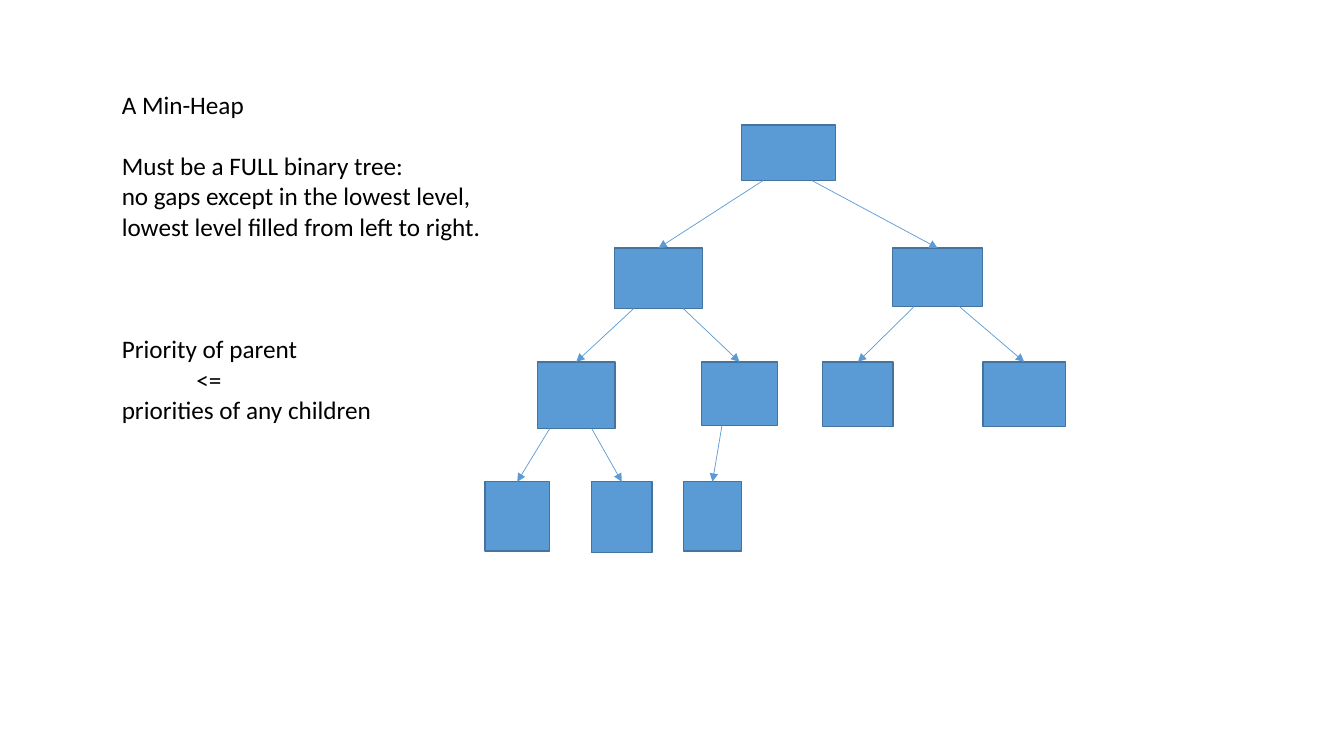
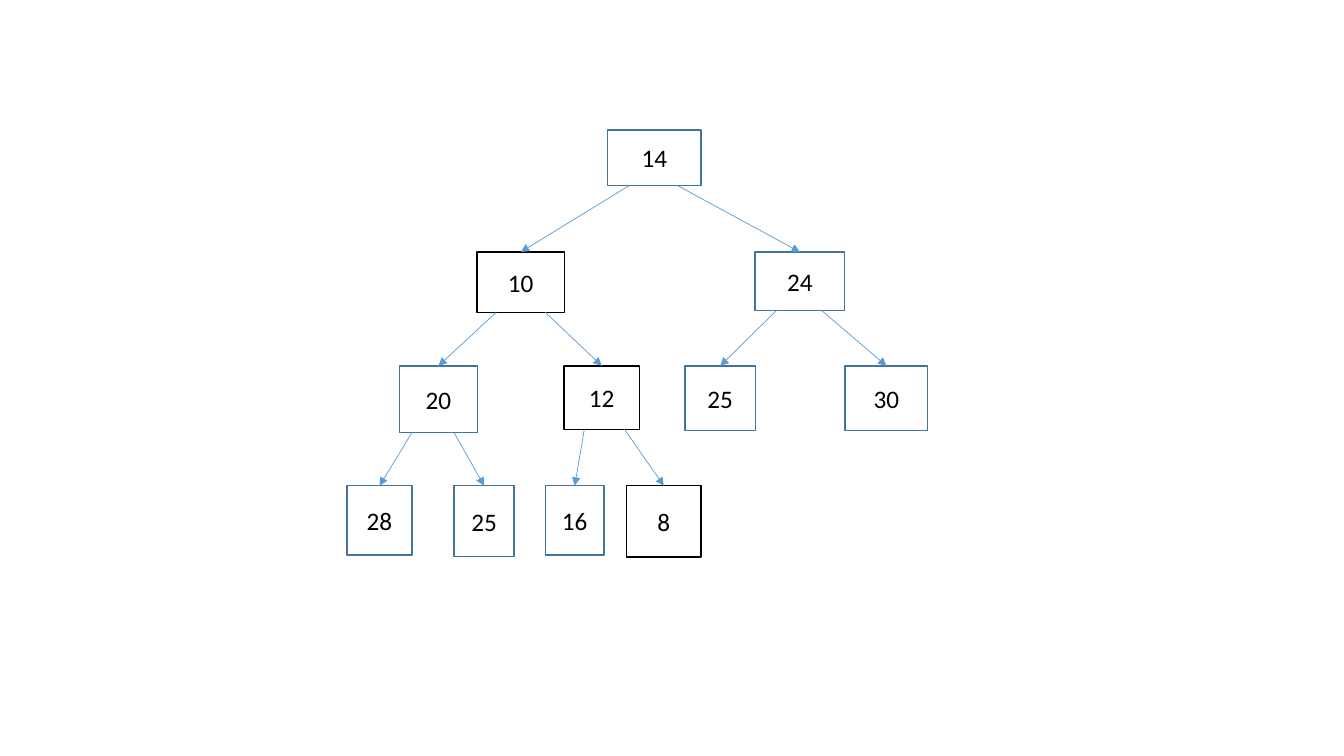
from pptx import Presentation
from pptx.dml.color import RGBColor
from pptx.enum.shapes import MSO_CONNECTOR as CONN, MSO_SHAPE as SHAPE
from pptx.enum.text import MSO_ANCHOR as ANCHOR, PP_ALIGN as ALIGN
from pptx.oxml.ns import qn
from pptx.util import Cm, Pt
from lxml.etree import SubElement

COLORS = {"blue": "5B9BD5", "edge": "43739E", "black": "000000", "white": "FFFFFF"}
FONT, SIZE = "Calibri", 18

# Explanation: text, space before in points, left indent in cm
NOTES = [
    ("A Min-Heap", 0, 0),
    ("Must be a FULL binary tree:", 22, 0),
    ("no gaps except in the lowest level,", 0, 0),
    ("lowest level filled from left to right.", 0, 0),
    ("Priority of parent", 66, 0),
    ("<=", 0, 1.88),
    ("priorities of any children", 0, 0),
]

# Heap nodes in array order: left, width, height in cm
NODES = [
    (18.69, 2.36, 1.40),
    (15.49, 2.21, 1.52), (22.50, 2.26, 1.47),
    (13.54, 1.96, 1.68), (17.68, 1.91, 1.60), (20.73, 1.78, 1.63), (24.77, 2.08, 1.63),
    (12.22, 1.63, 1.75), (14.91, 1.52, 1.78), (17.22, 1.47, 1.75), (19.26, 1.88, 1.80),
]
LEVEL_TOPS = [3.15, 6.25, 9.12, 12.14]
# Where the arrows to the left and right child leave each parent, as a share of its width
EXITS = [(0.23, 0.75), (0.22, 0.78), (0.24, 0.74), (0.16, 0.70), (0.27, 0.80)]

# One tree per slide; shifts in cm
TREES = [
    {"notes": NOTES, "labels": [""] * 10, "fill": "blue", "changed": (),
     "shift": (0, 0), "root_shift": (0, 0)},
    {"notes": [], "labels": ["14", "10", "24", "20", "12", "25", "30", "28", "25", "16", "8"],
     "fill": "white", "changed": (1, 4, 10),
     "shift": (-3.47, 0.1), "root_shift": (-3.38, 0.13)},
]


def rgb(name):
    return RGBColor.from_string(COLORS[name])


def add_run(p, text):
    r = p.add_run()
    r.text = text
    r.font.name, r.font.size = FONT, Pt(SIZE)
    r.font.color.rgb = rgb("black")


def add_notes(slide, notes):
    tf = slide.shapes.add_textbox(Cm(2.82), Cm(2.13), Cm(10), Cm(8.71)).text_frame
    tf.word_wrap = True
    for i, (text, before, indent) in enumerate(notes):
        p = tf.add_paragraph() if i else tf.paragraphs[0]
        p.space_before = Pt(before)
        p._p.get_or_add_pPr().set("marL", str(Cm(indent)))
        add_run(p, text)


def add_node(slide, i, label, tree):
    left, width, height = NODES[i]
    level = (i + 1).bit_length() - 1
    dx, dy = tree["shift"] if i else tree["root_shift"]
    sp = slide.shapes.add_shape(SHAPE.RECTANGLE, Cm(left + dx), Cm(LEVEL_TOPS[level] + dy),
                                Cm(width), Cm(height))
    sp.shadow.inherit = False
    sp.fill.solid()
    sp.fill.fore_color.rgb = rgb(tree["fill"])
    sp.line.color.rgb = rgb("black" if i in tree["changed"] else "edge")
    sp.line.width = Pt(1)
    if label:
        tf = sp.text_frame
        tf.vertical_anchor = ANCHOR.MIDDLE
        p = tf.paragraphs[0]
        p.alignment = ALIGN.CENTER
        add_run(p, label)
    return sp


def add_arrow(slide, parent, child, share):
    x = parent.left + int(parent.width * share)
    line = slide.shapes.add_connector(CONN.STRAIGHT, x, parent.top + parent.height,
                                      child.left + child.width // 2, child.top)
    line.end_connect(child, 0)
    line.line.color.rgb = rgb("blue")
    line.line.width = Pt(0.5)
    SubElement(line.line._get_or_add_ln(), qn("a:tailEnd"), type="triangle")
    SubElement(line._element.spPr, qn("a:effectLst"))


def add_tree(slide, tree):
    nodes = [add_node(slide, i, label, tree) for i, label in enumerate(tree["labels"])]
    # The parent of node i is node (i - 1) // 2
    for i, child in enumerate(nodes[1:], 1):
        parent, side = divmod(i - 1, 2)
        add_arrow(slide, nodes[parent], child, EXITS[parent][side])


def main():
    prs = Presentation()
    prs.slide_width, prs.slide_height = Cm(33.87), Cm(19.05)
    for tree in TREES:
        slide = prs.slides.add_slide(prs.slide_layouts[6])
        if tree["notes"]:
            add_notes(slide, tree["notes"])
        add_tree(slide, tree)
    prs.save("out.pptx")


if __name__ == "__main__":
    main()
